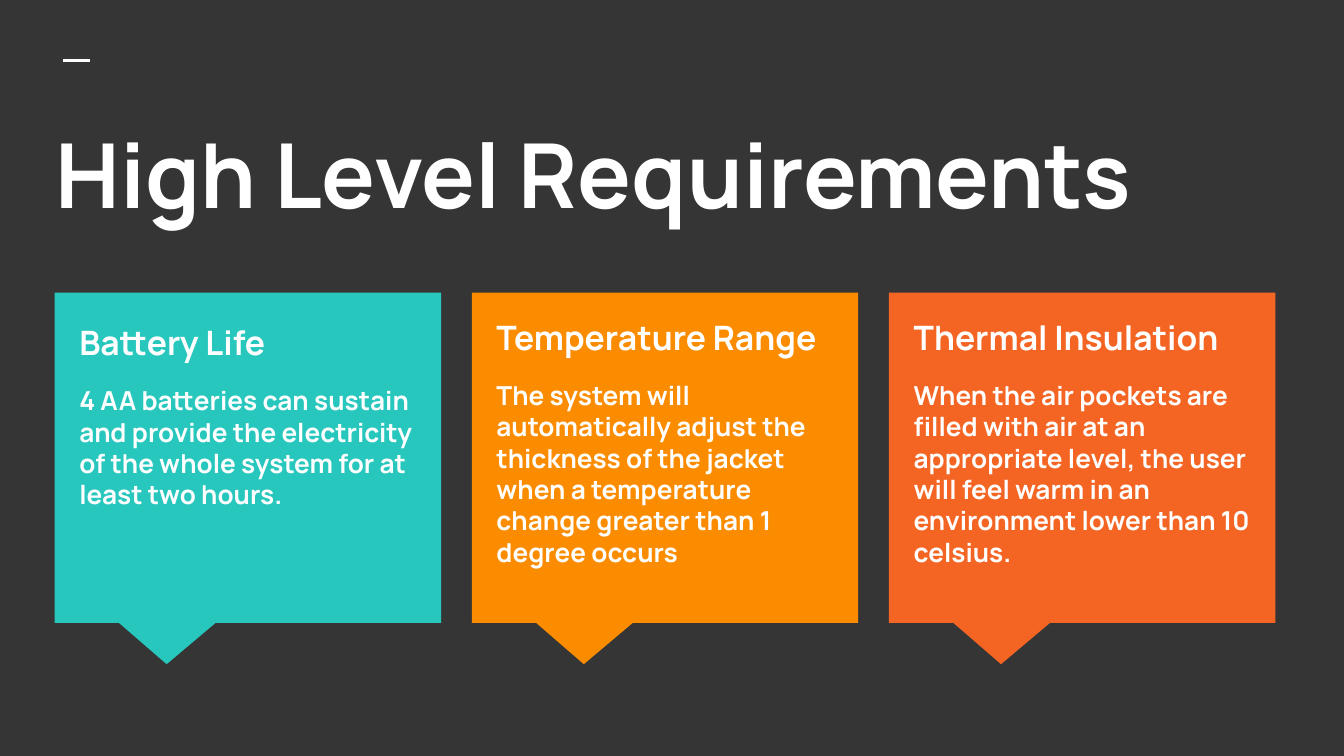
from dataclasses import dataclass

from lxml import etree
from pptx import Presentation
from pptx.dml.color import RGBColor
from pptx.enum.shapes import MSO_CONNECTOR, MSO_SHAPE
from pptx.enum.text import MSO_ANCHOR, MSO_AUTO_SIZE, PP_ALIGN
from pptx.oxml.ns import qn
from pptx.util import Pt

CALLOUT = MSO_SHAPE.RECTANGULAR_CALLOUT
STRAIGHT = MSO_CONNECTOR.STRAIGHT
TOP = MSO_ANCHOR.TOP
LEFT = PP_ALIGN.LEFT
NO_AUTOFIT = MSO_AUTO_SIZE.NONE

EMU_PER_PX = 9525
COMPARISON_LAYOUT = 4
INSET = 10


@dataclass(frozen=True)
class Theme:
    """Hold the colours, font and type sizes of the slide."""

    font: str = "Manrope"
    background: str = "353535"
    text: str = "FFFFFF"
    teal: str = "27C7BD"
    amber: str = "FB8C00"
    orange: str = "F46524"
    title_size: int = 48
    heading_size: int = 18
    body_size: int = 14
    paragraph_gap: int = 12
    rule_width: float = 1.5


THEME = Theme()

CARDS = [
    ("Battery Life",
     "4 AA batteries can sustain and provide the electricity of the whole "
     "system for at least two hours.",
     THEME.teal, INSET + 4),
    ("Temperature Range",
     "The system will automatically adjust the thickness of the jacket when "
     "a temperature change greater than 1 degree occurs",
     THEME.amber, INSET),
    ("Thermal Insulation",
     "When the air pockets are filled with air at an appropriate level, the "
     "user will feel warm in an environment lower than 10 celsius.",
     THEME.orange, INSET),
]


def px(length):
    """Turn a length in px into EMU."""
    return round(length * EMU_PER_PX)


def colour(value):
    """Turn a hex string into a colour."""
    return RGBColor.from_string(value)


def place(shape, left, top, width, height):
    """Move and size a shape."""
    shape.left, shape.top = px(left), px(top)
    shape.width, shape.height = px(width), px(height)


def prepare_frame(frame, top_inset=INSET):
    """Set the insets, wrapping and anchor of a text frame."""
    frame.margin_top = px(top_inset)
    frame.margin_bottom = px(INSET)
    frame.word_wrap = True
    frame.auto_size = NO_AUTOFIT
    frame.vertical_anchor = TOP


def write(paragraph, text, *, size, space_after=0):
    """Write formatted text without a bullet into a paragraph."""
    properties = paragraph._p.get_or_add_pPr()
    properties.set("marL", "0")
    properties.set("indent", "0")
    etree.SubElement(properties, qn("a:buNone"))
    paragraph.alignment = LEFT
    paragraph.line_spacing = 1.0
    paragraph.space_before = Pt(0)
    paragraph.space_after = Pt(space_after)
    run = paragraph.add_run()
    run.text = text
    run.font.name = THEME.font
    run.font.size = Pt(size)
    run.font.bold = True
    run.font.color.rgb = colour(THEME.text)


def add_header(slide, left, top):
    """Place the short rule and the title below it."""
    rule = slide.shapes.add_connector(
        STRAIGHT, px(left + 15), px(top), px(left + 34), px(top))
    rule.line.color.rgb = colour(THEME.text)
    rule.line.width = Pt(THEME.rule_width)
    etree.SubElement(rule._element.spPr, qn("a:effectLst"))
    title = slide.shapes.title
    place(title, left, top + 32, 905, 108)
    prepare_frame(title.text_frame)
    write(title.text_frame.paragraphs[0], "High Level Requirements",
          size=THEME.title_size)


def add_card(slide, placeholder, box, card):
    """Place a callout with a heading and a description on it."""
    left, top, width, height = box
    heading, description, fill, top_inset = card
    callout = slide.shapes.add_shape(CALLOUT, *map(px, box))
    callout.adjustments[0] = -0.21
    callout.adjustments[1] = 0.625
    callout.shadow.inherit = False
    callout.fill.solid()
    callout.fill.fore_color.rgb = colour(fill)
    callout.line.fill.background()

    slide.shapes._spTree.append(placeholder._element)
    place(placeholder, left + 8, top + 7, width - 16, height - 26)
    frame = placeholder.text_frame
    prepare_frame(frame, top_inset)
    write(frame.paragraphs[0], heading, size=THEME.heading_size,
          space_after=THEME.paragraph_gap)
    write(frame.add_paragraph(), description, size=THEME.body_size,
          space_after=THEME.paragraph_gap)


def add_cards(slide, left, top, width, height):
    """Spread the cards evenly over a row."""
    card_width = 276
    pitch = (width - card_width) / (len(CARDS) - 1)
    bodies = list(slide.placeholders)[1:]
    for index, (body, card) in enumerate(zip(bodies, CARDS)):
        add_card(slide, body, (left + index * pitch, top, card_width, height), card)
    for unused in bodies[len(CARDS):]:
        unused._element.getparent().remove(unused._element)


def main():
    """Build and save the slide."""
    presentation = Presentation()
    presentation.slide_width, presentation.slide_height = px(960), px(540)
    slide = presentation.slides.add_slide(
        presentation.slide_layouts[COMPARISON_LAYOUT])
    slide.background.fill.solid()
    slide.background.fill.fore_color.rgb = colour(THEME.background)
    add_header(slide, 30, 43)
    add_cards(slide, 39, 209, 872, 236)
    presentation.save("out.pptx")


if __name__ == "__main__":
    main()
